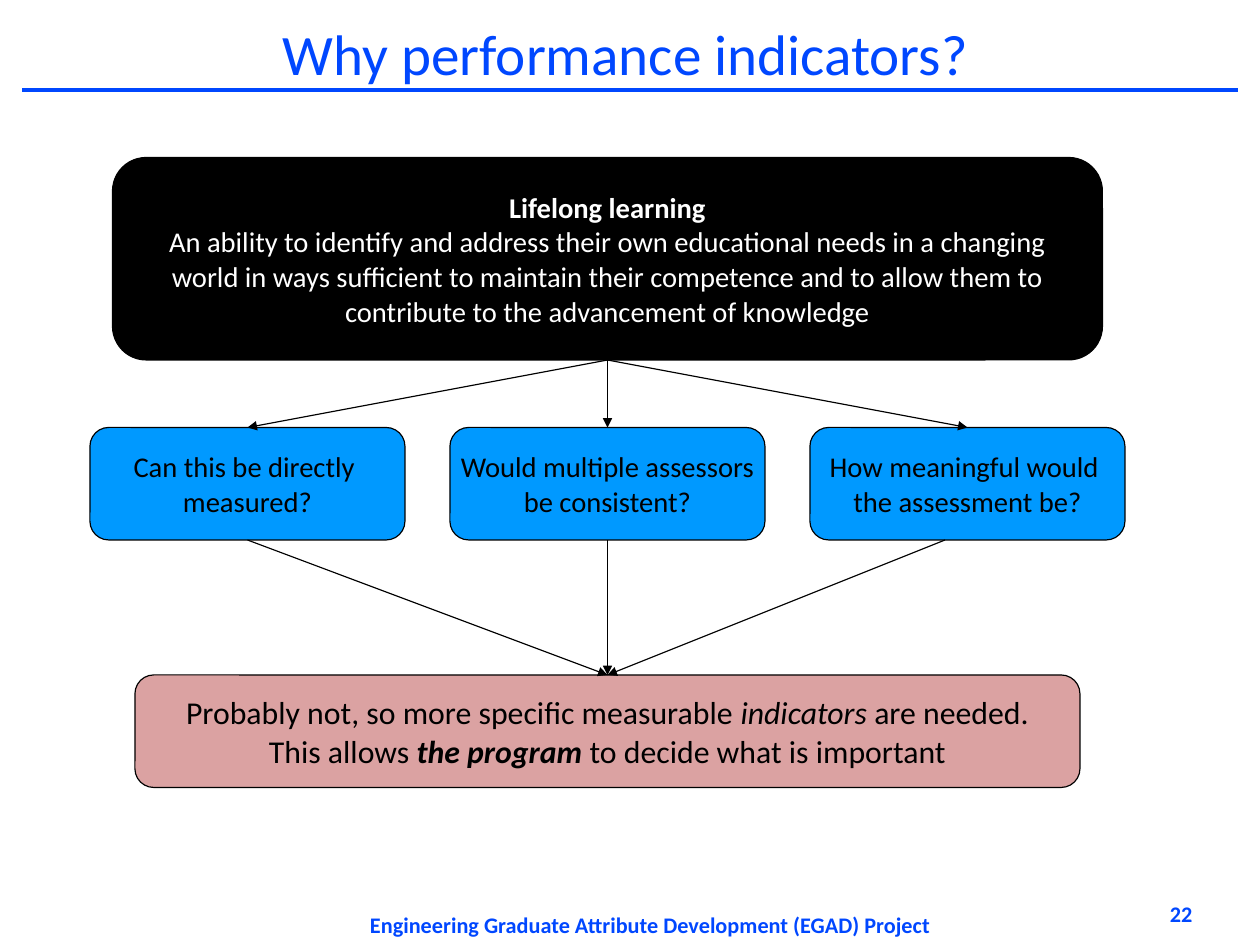
from dataclasses import dataclass

from lxml import etree
from pptx import Presentation
from pptx.dml.color import RGBColor
from pptx.enum.shapes import MSO_CONNECTOR, MSO_SHAPE
from pptx.enum.text import MSO_ANCHOR, PP_ALIGN
from pptx.oxml.ns import qn
from pptx.util import Mm, Pt

ROUND = MSO_SHAPE.ROUNDED_RECTANGLE
LINE = MSO_CONNECTOR.STRAIGHT
MID, TOP = MSO_ANCHOR.MIDDLE, MSO_ANCHOR.TOP
MIDDLE, RIGHT = PP_ALIGN.CENTER, PP_ALIGN.RIGHT

CELL = 5  # millimetres in one grid step
COLS, ROWS = 56, 42


@dataclass(frozen=True)
class Theme:
    font: str = "Calibri"
    blue: str = "0047FF"
    black: str = "000000"
    white: str = "FFFFFF"
    sky: str = "0099FF"
    rose: str = "B84747"
    title: int = 36
    large: int = 20
    body: int = 18
    small: int = 14
    thin: float = 0.75
    thick: float = 2.83
    space: float = 1.02


THEME = Theme()


@dataclass(frozen=True)
class Area:
    col: float
    row: float
    wide: float
    high: float

    def lengths(self) -> tuple:
        return tuple(grid(n) for n in (self.col, self.row, self.wide, self.high))


@dataclass(frozen=True)
class Span:
    text: str
    bold: bool = False
    slant: bool = False


@dataclass(frozen=True)
class Style:
    size: int
    color: str
    align: int = MIDDLE
    anchor: int = TOP
    space: float = 1.0


@dataclass(frozen=True)
class Label:
    area: Area
    span: Span
    style: Style


@dataclass(frozen=True)
class Box:
    area: Area
    lines: tuple
    fill: str
    style: Style
    alpha: int = 100


@dataclass(frozen=True)
class Link:
    start: tuple
    end: tuple
    color: str = THEME.black
    width: float = THEME.thin
    arrow: bool = True


def grid(steps: float) -> int:
    return Mm(steps * CELL)


def tint(code: str) -> RGBColor:
    return RGBColor.from_string(code)


def write(frame, lines: tuple, style: Style) -> None:
    """Fill a frame with lines, each a tuple of spans."""
    frame.text = "\n".join("" for _ in lines)
    frame.vertical_anchor = style.anchor
    for par, spans in zip(frame.paragraphs, lines):
        par.alignment = style.align
        par.line_spacing = style.space
        for span in spans:
            run = par.add_run()
            run.text = span.text
            font = run.font
            font.name, font.size = THEME.font, Pt(style.size)
            font.bold, font.italic = span.bold, span.slant
            font.color.rgb = tint(style.color)


def add_label(slide, label: Label) -> None:
    frame = slide.shapes.add_textbox(*label.area.lengths()).text_frame
    frame.word_wrap = True
    frame.margin_left = frame.margin_right = 0
    frame.margin_top = frame.margin_bottom = 0
    write(frame, ((label.span,),), label.style)


def add_box(slide, box: Box) -> None:
    shape = slide.shapes.add_shape(ROUND, *box.area.lengths())
    shape.shadow.inherit = False
    shape.fill.solid()
    shape.fill.fore_color.rgb = tint(box.fill)
    if box.alpha < 100:
        color = shape.fill._xPr.find(qn("a:solidFill"))[0]
        etree.SubElement(color, qn("a:alpha"), val=str(box.alpha * 1000))
    shape.line.color.rgb = tint(THEME.black)
    shape.line.width = Pt(THEME.thin)
    shape.text_frame.word_wrap = False
    write(shape.text_frame, box.lines, box.style)


def add_link(slide, link: Link) -> None:
    ends = [grid(n) for n in link.start + link.end]
    line = slide.shapes.add_connector(LINE, *ends)
    line.line.color.rgb = tint(link.color)
    line.line.width = Pt(link.width)
    if link.arrow:
        etree.SubElement(line.line._get_or_add_ln(), qn("a:tailEnd"), type="triangle")
    etree.SubElement(line._element.spPr, qn("a:effectLst"))


HEAD = Style(THEME.title, THEME.blue, anchor=MID, space=THEME.space)
FOOT = Style(THEME.small, THEME.blue)
PAGE = Style(THEME.small, THEME.blue, RIGHT)
LIGHT = Style(THEME.body, THEME.white, anchor=MID, space=THEME.space)
DARK = Style(THEME.body, THEME.black, anchor=MID, space=THEME.space)
LARGE = Style(THEME.large, THEME.black, anchor=MID, space=THEME.space)

LABELS = (
    Label(Area(15.6, 40.5, 26.6, 1.5),
          Span("Engineering Graduate Attribute Development (EGAD) Project", True), FOOT),
    Label(Area(42.4, 40, 10.6, 2), Span("22", True), PAGE),
    Label(Area(2.6, 0.65, 50.4, 3.3), Span("Why performance indicators?"), HEAD),
)
SKILL = Box(Area(5, 7, 44, 9), (
    (Span("Lifelong learning", True),),
    (Span("An ability to identify and address their own educational needs in a changing"),),
    (Span("world in ways sufficient to maintain their competence and to allow them to"),),
    (Span("contribute to the advancement of knowledge"),),
), THEME.black, LIGHT)
ASKED = (
    ("Can this be directly ", "measured?"),
    ("Would multiple assessors", "be consistent?"),
    ("How meaningful would ", "the assessment be?"),
)
ANSWER = Box(Area(6, 30, 42, 5), (
    (Span("Probably not, so more specific measurable "),
     Span("indicators", slant=True), Span(" are needed.")),
    (Span("This allows "), Span("the program", True, True),
     Span(" to decide what is important")),
), THEME.rose, LARGE, alpha=50)
RULE = Link((1, 4), (55, 4), THEME.blue, THEME.thick, arrow=False)
HUB = 27
INTO = (11, HUB, 43)
OUT = (11, HUB, 42)


def main() -> None:
    deck = Presentation()
    deck.slide_width, deck.slide_height = grid(COLS), grid(ROWS)
    slide = deck.slides.add_slide(deck.slide_layouts[6])
    add_link(slide, RULE)
    for label in LABELS:
        add_label(slide, label)
    add_box(slide, SKILL)
    for i, pair in enumerate(ASKED):
        lines = tuple((Span(text),) for text in pair)
        add_box(slide, Box(Area(4 + 16 * i, 19, 14, 5), lines, THEME.sky, DARK))
    add_box(slide, ANSWER)
    for top, low in zip(INTO, OUT):
        add_link(slide, Link((HUB, 16), (top, 19)))
        add_link(slide, Link((low, 24), (HUB, 30)))
    deck.save("out.pptx")


if __name__ == "__main__":
    main()
